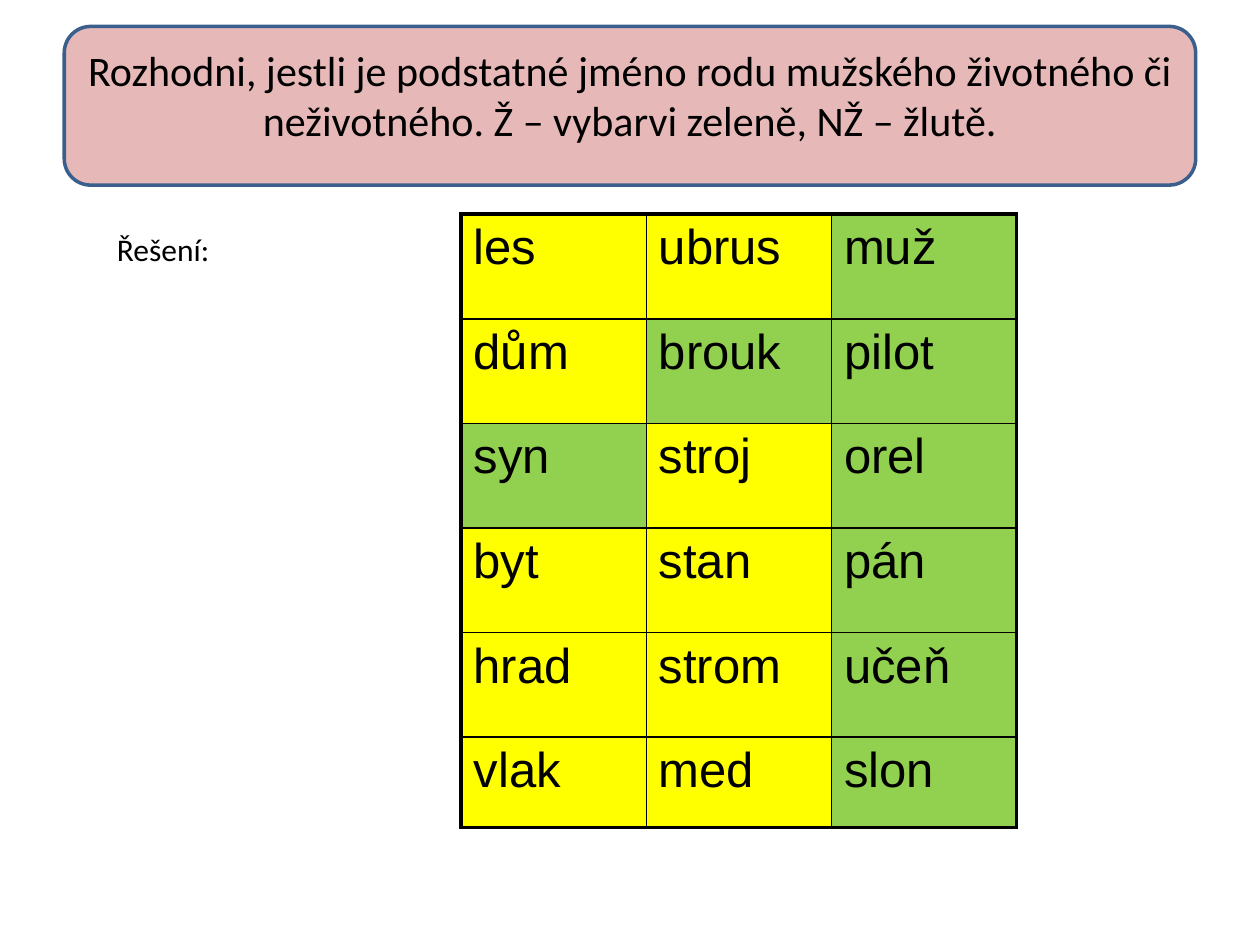
from lxml.etree import SubElement
from pptx import Presentation
from pptx.dml.color import RGBColor
from pptx.enum.shapes import MSO_SHAPE
from pptx.enum.text import PP_ALIGN
from pptx.oxml.ns import qn
from pptx.util import Inches, Pt


def paint(color, value):
    color.rgb = RGBColor.from_string(value)


def write(frame, text, font, size):
    frame.text = text
    run = frame.paragraphs[0].runs[0]
    run.font.name = font
    run.font.size = Pt(size)
    paint(run.font.color, "000000")


deck = Presentation()
deck.slide_width, deck.slide_height = Inches(10), Inches(7.5)
slide = deck.slides.add_slide(deck.slide_layouts[6])
shapes = slide.shapes

# Task banner
banner = shapes.add_shape(MSO_SHAPE.ROUNDED_RECTANGLE, Inches(0.51), Inches(0.21),
                          Inches(8.98), Inches(1.26))
banner.shadow.inherit = False
banner.fill.solid()
paint(banner.fill.fore_color, "E6B9B8")
paint(banner.line.color, "3A5F8C")
banner.line.width = Pt(2)

# Task text
task = shapes.add_textbox(Inches(0.5), Inches(0.3), Inches(9), Inches(1.25)).text_frame
task.word_wrap = True
write(task, "Rozhodni, jestli je podstatné jméno rodu mužského životného či "
      "neživotného. Ž – vybarvi zeleně, NŽ – žlutě.", "Calibri", 24)
task.paragraphs[0].alignment = PP_ALIGN.CENTER

# Word table: animate nouns green, inanimate yellow
words = [
    ["les", "ubrus", "muž"],
    ["dům", "brouk", "pilot"],
    ["syn", "stroj", "orel"],
    ["byt", "stan", "pán"],
    ["hrad", "strom", "učeň"],
    ["vlak", "med", "slon"],
]
alive = {"muž", "brouk", "pilot", "syn", "orel", "pán", "učeň", "slon"}
rows, cols = len(words), len(words[0])
table = shapes.add_table(rows, cols, Inches(3.66), Inches(1.7),
                         Inches(4.42), Inches(4.88)).table
for col in table.columns:
    col.width = Inches(1.47)
for row in table.rows:
    row.height = Inches(0.83)
table.rows[rows - 1].height = Inches(0.72)

for r, line in enumerate(words):
    for c, word in enumerate(line):
        cell = table.cell(r, c)
        write(cell.text_frame, word, "Arial", 28)
        # Thick outer edges, thin inner ones
        outer = {"L": c == 0, "R": c == cols - 1, "T": r == 0, "B": r == rows - 1}
        props = cell._tc.get_or_add_tcPr()
        for side, thick in outer.items():
            edge = SubElement(props, qn(f"a:ln{side}"), w=str(Pt(2.25 if thick else 1)))
            fill = SubElement(edge, qn("a:solidFill"))
            SubElement(fill, qn("a:srgbClr"), val="000000")
        cell.fill.solid()
        paint(cell.fill.fore_color, "92D050" if word in alive else "FFFF00")

# Solution label
label = shapes.add_textbox(Inches(0.83), Inches(1.78), Inches(1.42), Inches(0.4)).text_frame
label.word_wrap = True
write(label, "Řešení:", "Calibri", 18)

deck.save("out.pptx")
